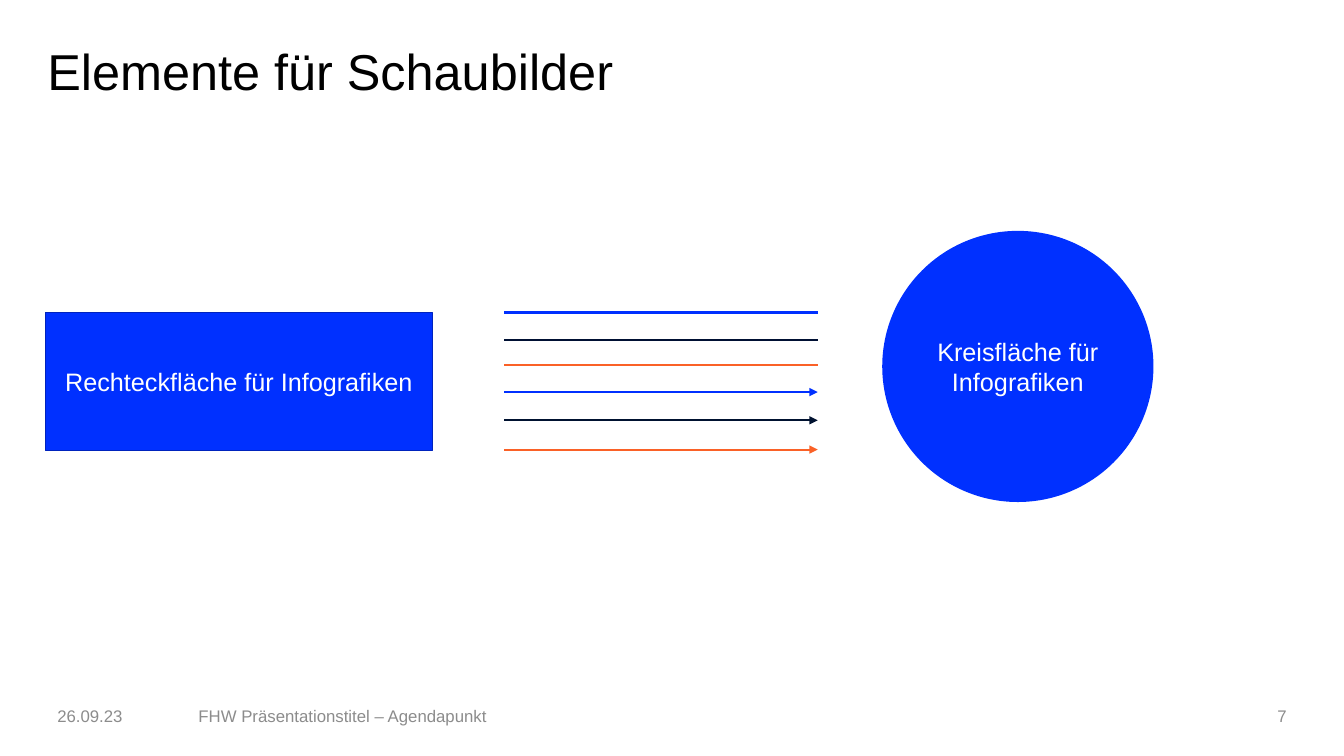
"""Build the slide of basic diagram elements: box, lines, arrows and circle."""
from pptx import Presentation
from pptx.dml.color import RGBColor
from pptx.enum.shapes import MSO_CONNECTOR as Link, MSO_SHAPE as Shape
from pptx.enum.text import MSO_ANCHOR as Anchor, PP_ALIGN as Align
from pptx.oxml.ns import qn
from pptx.util import Inches, Pt
from lxml.etree import SubElement

BLUE, NAVY, RED = "0030FF", "001033", "FA6127"
GREY, WHITE, BLACK = "8C8C8C", "FFFFFF", "000000"


def paint(target, color):
    target.rgb = RGBColor.from_string(color)


def write(frame, text, size, color, align):
    frame.word_wrap = True
    para = frame.paragraphs[0]
    para.text = text
    para.alignment = align
    para.font.name = "Arial"
    para.font.size = Pt(size)
    paint(para.font.color, color)
    return para


deck = Presentation()
deck.slide_width, deck.slide_height = Inches(13.33), Inches(7.5)
slide = deck.slides.add_slide(deck.slide_layouts[6])
shapes = slide.shapes

title = shapes.add_textbox(Inches(0.47), Inches(0.47), Inches(11.5), Inches(0.79)).text_frame
title.margin_left = title.margin_right = title.margin_top = title.margin_bottom = 0
write(title, "Elemente für Schaubilder", 36, BLACK, Align.LEFT).line_spacing = 0.9

areas = [
    (Shape.OVAL, 8.75, 2.29, 2.69, 2.69, "Kreisfläche für Infografiken", None),
    (Shape.RECTANGLE, 0.45, 3.1, 3.84, 1.37, "Rechteckfläche für Infografiken", "0023BD"),
]
for kind, left, top, width, height, text, edge in areas:
    area = shapes.add_shape(kind, Inches(left), Inches(top), Inches(width), Inches(height))
    area.shadow.inherit = False
    area.fill.solid()
    paint(area.fill.fore_color, BLUE)
    if edge:
        paint(area.line.color, edge)
        area.line.width = Pt(1)
    else:
        area.line.fill.background()
    area.text_frame.vertical_anchor = Anchor.MIDDLE
    write(area.text_frame, text, 18, WHITE, Align.CENTER)

lines = [
    (3.1, BLUE, False),
    (3.37, NAVY, False),
    (3.62, RED, False),
    (3.89, BLUE, True),
    (4.17, "001230", True),
    (4.46, RED, True),
]
for y, color, arrow in lines:
    line = shapes.add_connector(Link.STRAIGHT, Inches(5), Inches(y), Inches(8.11), Inches(y))
    paint(line.line.color, color)
    line.line.width = Pt(1.5)
    if arrow:
        SubElement(line.line._get_or_add_ln(), qn("a:tailEnd"), type="triangle")
    SubElement(line._element.spPr, qn("a:effectLst"))

footer = [
    (0.47, 1.17, "26.09.23", Align.LEFT),
    (1.87, 9.86, "FHW Präsentationstitel – Agendapunkt", Align.LEFT),
    (11.99, 0.87, "7", Align.RIGHT),
]
for left, width, text, align in footer:
    box = shapes.add_textbox(Inches(left), Inches(6.95), Inches(width), Inches(0.4))
    write(box.text_frame, text, 12, GREY, align)

deck.save("out.pptx")
